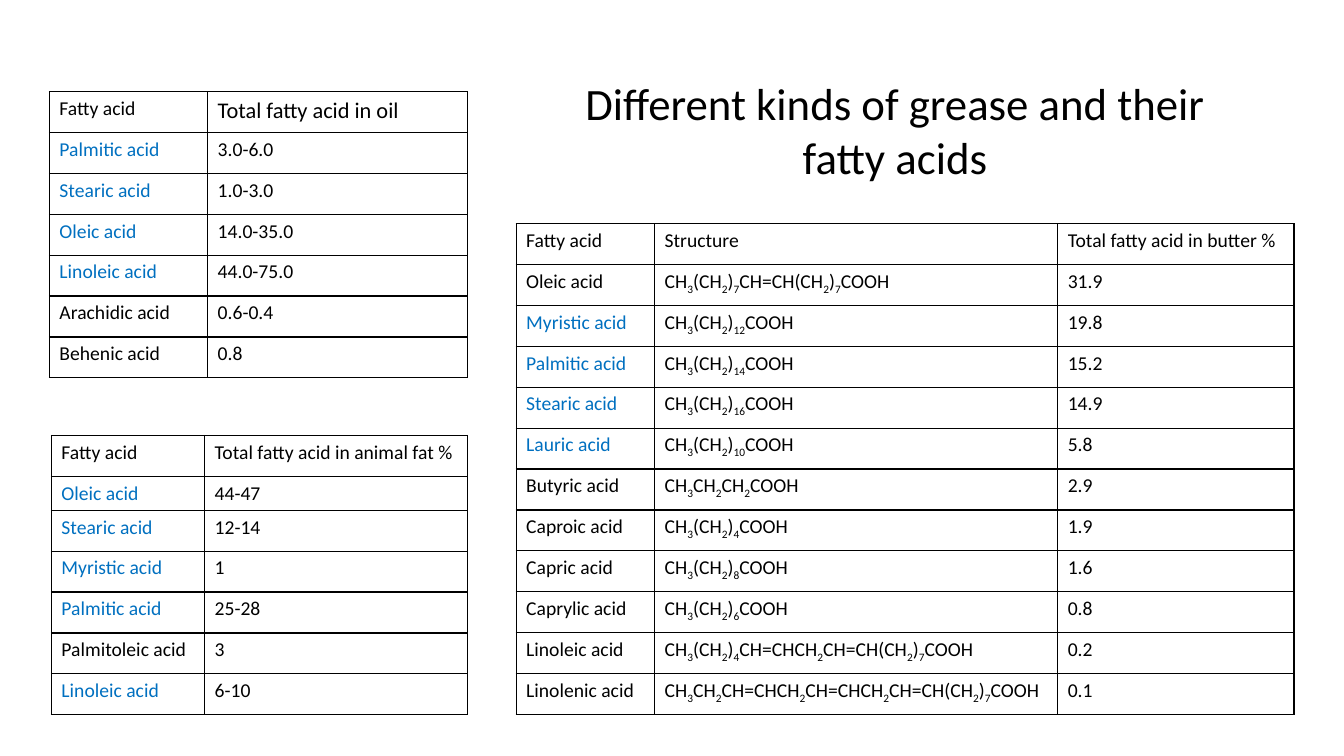
from dataclasses import dataclass
from itertools import groupby

from lxml import etree
from pptx import Presentation
from pptx import util as u
from pptx.dml import color
from pptx.enum import text
from pptx.oxml import ns

COLORS = {"black": "000000", "blue": "0070C0"}
FONT = "Calibri"
ROW_HEIGHT = 29.22


@dataclass(frozen=True)
class AcidTable:
    left: float
    top: float
    widths: tuple[float, ...]
    header: tuple[str, ...]
    rows: tuple[tuple[str, ...], ...]
    blue_rows: frozenset[int]
    short_rows: frozenset[int] = frozenset()
    value_header_size: float = 14


OIL = AcidTable(
    35.28, 65.52, (113.04, 185.76),
    ("Fatty acid", "Total fatty acid in oil"),
    (
        ("Palmitic acid", "3.0-6.0"),
        ("Stearic acid", "1.0-3.0"),
        ("Oleic acid", "14.0-35.0"),
        ("Linoleic acid", "44.0-75.0"),
        ("Arachidic acid", "0.6-0.4"),
        ("Behenic acid", "0.8"),
    ),
    blue_rows=frozenset({1, 2, 3, 4}),
    value_header_size=16,
)
ANIMAL_FAT = AcidTable(
    36.72, 311.04, (109.44, 187.92),
    ("Fatty acid", "Total fatty acid in animal fat %"),
    (
        ("Oleic acid", "44-47"),
        ("Stearic acid", "12-14"),
        ("Myristic acid", "1"),
        ("Palmitic acid", "25-28"),
        ("Palmitoleic acid", "3"),
        ("Linoleic acid", "6-10"),
    ),
    blue_rows=frozenset({1, 2, 3, 4, 6}),
    short_rows=frozenset({1}),
)
BUTTER = AcidTable(
    368.64, 159.84, (98.9, 288, 168.8),
    ("Fatty acid", "Structure", "Total fatty acid in butter %"),
    (
        ("Oleic acid", "CH3(CH2)7CH=CH(CH2)7COOH", "31.9"),
        ("Myristic acid", "CH3(CH2)12COOH", "19.8"),
        ("Palmitic acid", "CH3(CH2)14COOH", "15.2"),
        ("Stearic acid", "CH3(CH2)16COOH", "14.9"),
        ("Lauric acid", "CH3(CH2)10COOH", "5.8"),
        ("Butyric acid", "CH3CH2CH2COOH", "2.9"),
        ("Caproic acid", "CH3(CH2)4COOH", "1.9"),
        ("Capric acid", "CH3(CH2)8COOH", "1.6"),
        ("Caprylic acid", "CH3(CH2)6COOH", "0.8"),
        ("Linoleic acid", "CH3(CH2)4CH=CHCH2CH=CH(CH2)7COOH", "0.2"),
        ("Linolenic acid", "CH3CH2CH=CHCH2CH=CHCH2CH=CH(CH2)7COOH", "0.1"),
    ),
    blue_rows=frozenset({2, 3, 4, 5}),
)


def write_text(frame, content: str, *, size: float = 14, ink: str = "black",
               align=text.PP_ALIGN.LEFT, formula: bool = False) -> None:
    """Write one paragraph; in a formula every number is a subscript."""
    paragraph = frame.paragraphs[0]
    paragraph.alignment = align
    parts = [(False, content)]
    if formula:
        parts = [(digit, "".join(letters)) for digit, letters in groupby(content, str.isdigit)]
    for subscript, part in parts:
        run = paragraph.add_run()
        run.text = part
        run.font.name = FONT
        run.font.size = u.Pt(size)
        run.font.color.rgb = color.RGBColor.from_string(COLORS[ink])
        if subscript:
            run._r.get_or_add_rPr().set("baseline", "-25000")


def add_borders(cell) -> None:
    properties = cell._tc.get_or_add_tcPr()
    for side in ("L", "R", "T", "B"):
        line = etree.SubElement(properties, ns.qn(f"a:ln{side}"), w=str(u.Pt(1)))
        fill = etree.SubElement(line, ns.qn("a:solidFill"))
        etree.SubElement(fill, ns.qn("a:srgbClr"), val=COLORS["black"])


def add_acid_table(slide, acids: AcidTable) -> None:
    rows = (acids.header, *acids.rows)
    heights = [24 if i in acids.short_rows else ROW_HEIGHT for i in range(len(rows))]
    table = slide.shapes.add_table(
        len(rows), len(acids.widths), u.Pt(acids.left), u.Pt(acids.top),
        u.Pt(sum(acids.widths)), u.Pt(sum(heights)),
    ).table
    table.first_row = table.horz_banding = False
    for column, width in zip(table.columns, acids.widths):
        column.width = u.Pt(width)
    for i, values in enumerate(rows):
        table.rows[i].height = u.Pt(heights[i])
        for j, value in enumerate(values):
            cell = table.cell(i, j)
            add_borders(cell)
            cell.fill.background()
            write_text(
                cell.text_frame, value,
                size=acids.value_header_size if i == 0 and j > 0 else 14,
                ink="blue" if j == 0 and i in acids.blue_rows else "black",
                formula=i > 0 and acids.header[j] == "Structure",
            )


def add_title(slide) -> None:
    title = slide.shapes.title
    title.left, title.top = u.Pt(401.76), u.Pt(50.4)
    title.width, title.height = u.Pt(475.2), u.Pt(84.96)
    frame = title.text_frame
    frame.word_wrap = True
    frame.auto_size = text.MSO_AUTO_SIZE.NONE
    frame.vertical_anchor = text.MSO_ANCHOR.TOP
    write_text(frame, "Different kinds of grease and their fatty acids",
               size=32, align=text.PP_ALIGN.CENTER)


def main() -> None:
    presentation = Presentation()
    presentation.slide_width, presentation.slide_height = u.Pt(960), u.Pt(540)
    # Title-only layout
    slide = presentation.slides.add_slide(presentation.slide_layouts[5])
    add_title(slide)
    # Fatty acid tables
    for acids in (BUTTER, OIL, ANIMAL_FAT):
        add_acid_table(slide, acids)
    presentation.save("out.pptx")


if __name__ == "__main__":
    main()
